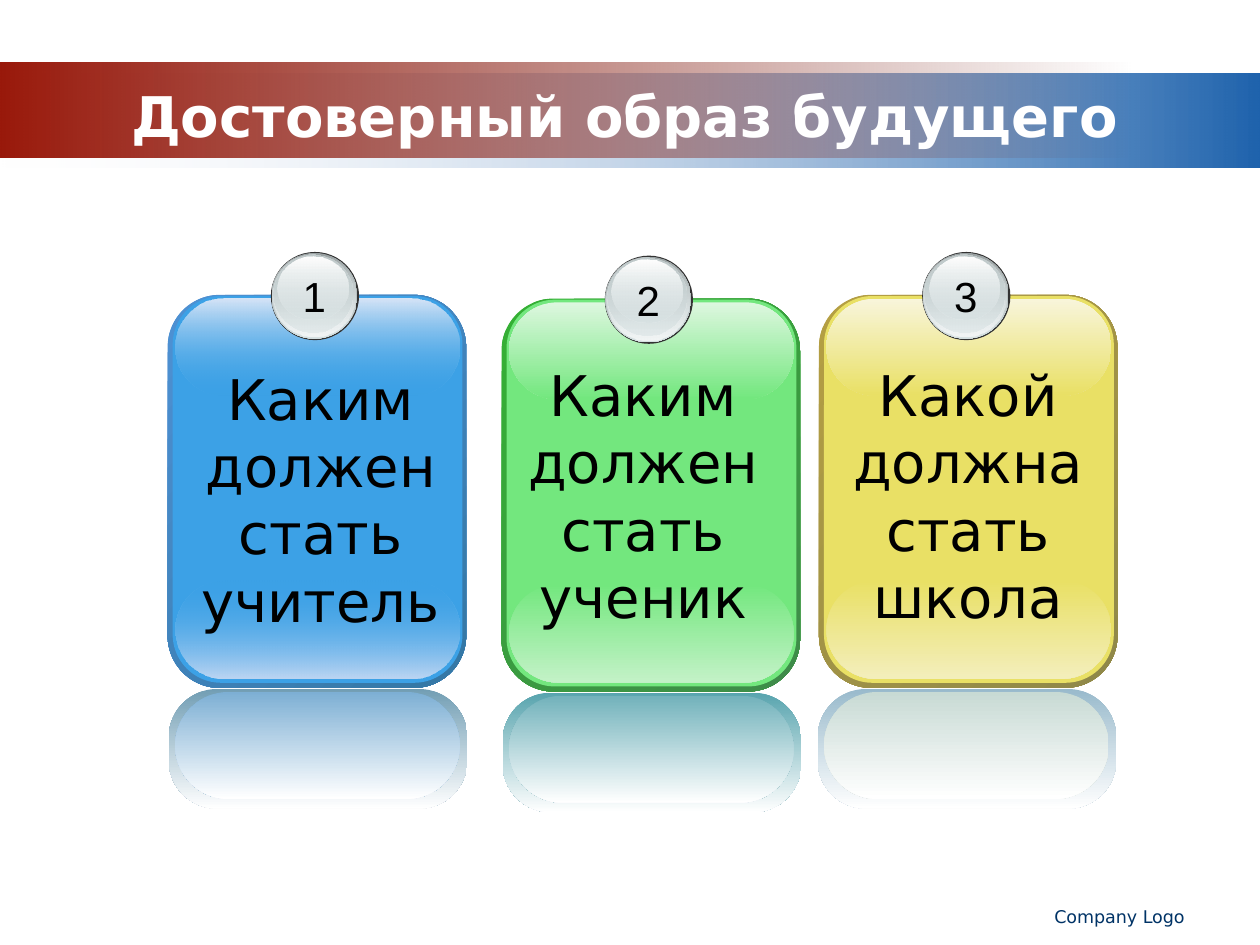
import pptx
import pptx.util
import pptx.dml.color
import pptx.enum.shapes
import pptx.enum.text
import pptx.oxml.ns
import lxml.etree

Pt = pptx.util.Pt
RGB = pptx.dml.color.RGBColor.from_string
SHAPE = pptx.enum.shapes.MSO_SHAPE
ALIGN = pptx.enum.text.PP_ALIGN
ANCHOR = pptx.enum.text.MSO_ANCHOR
qn = pptx.oxml.ns.qn

THEME = {
    "font": "DejaVu Sans", "number_font": "Arial",
    "title_size": 32, "card_size": 32, "number_size": 24, "footer_size": 10,
    "card_leading": 38.5,
    "title": "FFFFFF", "text": "000000", "footer": "003366",
    "rim": "333333",
}

TITLE = "Достоверный образ будущего"
FOOTER = "Company Logo"

BANDS = [
    ((0, 41.8, 720, 54), [("F1F2F7", 0), ("1F63AD", 100)]),
    ((0, 36, 648, 54), [("99190B", 100), ("6D1208", 0)]),
]

CARDS = [
    {"text": "Каким должен стать учитель", "at": (95.8, 168.5),
     "text_at": (102.2, 204.5), "mirror_dx": 0.7, "fade": 0,
     "edge": ("4E91D4", "3477A4"), "face": "3CA1E6",
     "top": "D7E5F7", "bottom": "BDD6F3", "mirror": ("729EB4", "7DAFD4")},
    {"text": "Каким должен стать ученик", "at": (286.6, 170.6),
     "text_at": (286.6, 202.3), "mirror_dx": 0.7, "fade": 100,
     "edge": ("34B034", "3F8B4A"), "face": "73E77E",
     "top": "DDF7DF", "bottom": "C3F2C7", "mirror": ("58A4AE", "72B2BB")},
    {"text": "Какой должна стать школа", "at": (468, 168.5),
     "text_at": (472.3, 202.3), "mirror_dx": -0.7, "fade": 100,
     "edge": ("B59F43", "8F8849"), "face": "E9E065",
     "top": "F8F5DB", "bottom": "F3EEBB", "mirror": ("99BACC", "C8DAD4")},
]

BADGE_LAYERS = [
    ((59, -24.5, 50.4, 50.4), THEME["rim"]),
    ((59.4, -24, 49, 49), [("99A1A2", 100), ("D6E1E2", 100)]),
    ((59.8, -23.8, 47.5, 47.5), [("D6E1E2", 0), ("F2F5F5", 100)]),
    ((60.5, -23.2, 45.4, 44.6), [("C1CBCC", 100), ("D6E1E2", 48)]),
    ((63, -22, 40.3, 36), [("FFFFFF", 100), ("D6E1E2", 38)]),
]
NUMBER_BOX = (69.8, -17.3, 28.1, 36)
TEXT_SIZE = (162, 162.7)


def shifted(box, origin):
    return (box[0] + origin[0], box[1] + origin[1], box[2], box[3])


def paint(sp, fill, angle):
    if isinstance(fill, str):
        sp.fill.solid()
        sp.fill.fore_color.rgb = RGB(fill)
        return
    sp.fill.gradient()
    sp.fill.gradient_angle = (360 - angle) % 360
    for stop, (color, _) in zip(sp.fill.gradient_stops, fill):
        stop.color.rgb = RGB(color)
    for node, (_, alpha) in zip(sp.element.spPr.iter(qn("a:srgbClr")), fill):
        if alpha < 100:
            lxml.etree.SubElement(node, qn("a:alpha")).set("val", str(alpha * 1000))


def add_layer(shapes, kind, box, fill, angle=90, radius=None):
    sp = shapes.add_shape(kind, *map(Pt, box))
    sp.shadow.inherit = False
    sp.line.fill.background()
    if radius is not None:
        sp.adjustments[0] = radius
    paint(sp, fill, angle)


def write(sp, text, size, color, font, align=ALIGN.CENTER, wrap=True, bold=False):
    tf = sp.text_frame
    tf.word_wrap = wrap
    p = tf.paragraphs[0]
    p.text = text
    p.alignment = align
    p.font.size = Pt(size)
    p.font.name = font
    p.font.bold = bold
    p.font.color.rgb = RGB(color)
    return p


def add_card(s, number, card):
    shapes = s.shapes.add_group_shape().shapes
    face, fade, dx = card["face"], card["fade"], card["mirror_dx"]
    edge = [(c, 100) for c in card["edge"]]
    outer, inner = ([(c, 100), ("FFFFFF", 100)] for c in card["mirror"])
    layers = [
        ((0, 0, 170.6, 224.6), edge, 45, 0.175),
        ((2.9, 0.7, 165.6, 221), face, 0, 0.167),
        ((4.3, 163.2, 162.7, 56.2), [(face, fade), (card["bottom"], 100)], 90, 0.5),
        ((4.3, 2.2, 162.7, 55.4), [(card["top"], 100), (face, fade)], 90, 0.5),
        ((dx, 225.2, 170.6, 68.4), outer, 90, 0.404),
        ((dx + 3.6, 226.9, 162.7, 61.2), inner, 90, 0.5),
    ]
    for box, fill, angle, radius in layers:
        add_layer(shapes, SHAPE.ROUNDED_RECTANGLE, shifted(box, card["at"]), fill, angle, radius)
    for box, fill in BADGE_LAYERS:
        add_layer(shapes, SHAPE.OVAL, shifted(box, card["at"]), fill)
    label = shapes.add_textbox(*map(Pt, shifted(NUMBER_BOX, card["at"])))
    write(label, str(number), THEME["number_size"], THEME["text"], THEME["number_font"], wrap=False)
    body = shapes.add_textbox(*map(Pt, card["text_at"] + TEXT_SIZE))
    p = write(body, card["text"], THEME["card_size"], THEME["text"], THEME["font"])
    p.line_spacing = Pt(THEME["card_leading"])


def main():
    prs = pptx.Presentation()
    prs.slide_width, prs.slide_height = Pt(720), Pt(540)
    s = prs.slides.add_slide(prs.slide_layouts[5])

    for box, fill in BANDS:
        add_layer(s.shapes, SHAPE.RECTANGLE, box, fill, 0)

    footer = s.shapes.add_textbox(Pt(455.8), Pt(514.1), Pt(228.2), Pt(21.6))
    write(footer, FOOTER, THEME["footer_size"], THEME["footer"], THEME["font"], ALIGN.RIGHT)

    title = s.shapes.title
    title.left, title.top, title.width, title.height = map(Pt, (66.2, 43.2, 581.8, 44.6))
    write(title, TITLE, THEME["title_size"], THEME["title"], THEME["font"], bold=True)
    title.text_frame.vertical_anchor = ANCHOR.MIDDLE
    title.element.getparent().append(title.element)

    for number, card in enumerate(CARDS, 1):
        add_card(s, number, card)

    prs.save("out.pptx")


if __name__ == "__main__":
    main()
